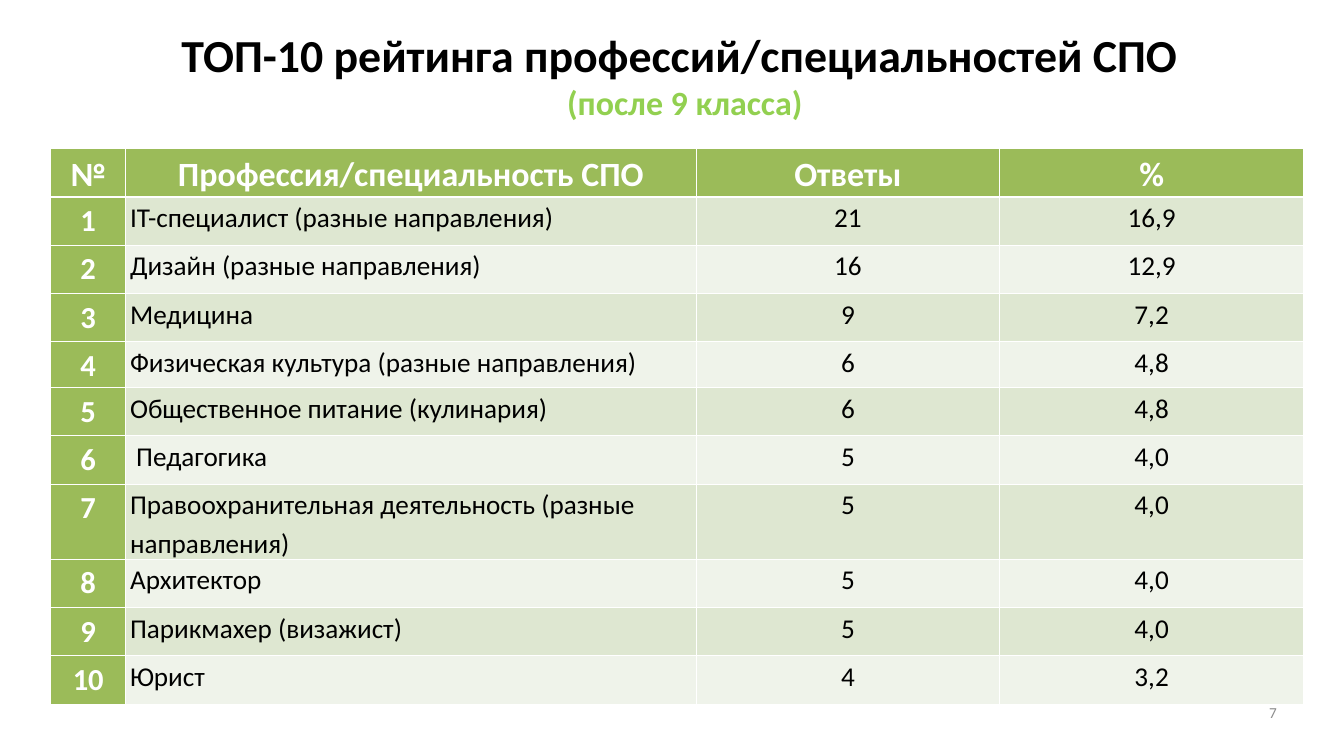
import pptx
import pptx.util
import pptx.dml.color
import pptx.enum.text
import pptx.oxml

W, H = 21.99, 12.37
COLORS = {"white": "FFFFFF", "black": "000000", "lime": "92D050", "green": "9BBB59",
          "band": "DEE7D1", "pale": "EFF3EA", "gray": "8C8C8C"}
ALIGN = pptx.enum.text.PP_ALIGN
HEADER = ("№", "Профессия/специальность СПО", "Ответы", "%")
RATING = [
    ("IT-специалист (разные направления)", "21", "16,9"),
    ("Дизайн (разные направления)", "16", "12,9"),
    ("Медицина", "9", "7,2"),
    ("Физическая культура (разные направления)", "6", "4,8"),
    ("Общественное питание (кулинария)", "6", "4,8"),
    (" Педагогика", "5", "4,0"),
    ("Правоохранительная деятельность (разные направления)", "5", "4,0"),
    ("Архитектор", "5", "4,0"),
    ("Парикмахер (визажист)", "5", "4,0"),
    ("Юрист", "4", "3,2"),
]
COLUMN_SHARES = (5.59, 42.43, 22.6, 22.6)
ROW_SHARE, SHORT_ROW_SHARE, SHORT_ROW = 6.39, 6.06, 4


def across(share):
    return pptx.util.Inches(W * share / 100)


def down(share):
    return pptx.util.Inches(H * share / 100)


def rgb(color):
    return pptx.dml.color.RGBColor.from_string(COLORS[color])


def apply(obj, values):
    for name, value in values.items():
        setattr(obj, name, value)


def add_run(p, text, size, color, bold=False):
    r = p.add_run()
    r.text = text
    apply(r.font, {"name": "Calibri", "size": pptx.util.Pt(size), "bold": bold})
    r.font.color.rgb = rgb(color)


def add_text(s, left, top, width, height, align):
    sp = s.shapes.add_textbox(across(left), down(top), across(width), down(height))
    tf = sp.text_frame
    apply(tf, {"word_wrap": True, "margin_left": 0, "margin_right": 0,
               "margin_top": 0, "margin_bottom": 0})
    p = tf.paragraphs[0]
    p.alignment = align
    return p


def add_border(cell, side, width):
    cell._tc.get_or_add_tcPr().append(pptx.oxml.parse_xml(
        f'<a:{side} xmlns:a="http://schemas.openxmlformats.org/drawingml/2006/main"'
        f' w="{pptx.util.Pt(width)}"><a:solidFill><a:srgbClr val="{COLORS["white"]}"/>'
        f'</a:solidFill></a:{side}>'))


def fill_cell(cell, row, col, text):
    heading = row == 0 or col == 0
    margin = pptx.util.Inches(0.06 if heading else 0.07)
    apply(cell, {"margin_left": margin, "margin_right": margin,
                 "margin_top": 0, "margin_bottom": 0})
    widths = {"lnL": 1, "lnR": 1, "lnT": 3 if row == 1 else 1, "lnB": 3 if row == 0 else 1}
    for side, width in widths.items():
        add_border(cell, side, width)
    cell.fill.solid()
    cell.fill.fore_color.rgb = rgb("green" if heading else "band" if row % 2 else "pale")
    p = cell.text_frame.paragraphs[0]
    left = row > 0 and col == 1
    apply(p, {"alignment": ALIGN.LEFT if left else ALIGN.CENTER, "line_spacing": 1.15})
    size = 40 if row == 0 else 36 if col == 0 else 32
    add_run(p, text, size, "white" if heading else "black", heading)


def add_rating(s):
    rows = [HEADER] + [(str(i), *entry) for i, entry in enumerate(RATING, 1)]
    heights = [SHORT_ROW_SHARE if i == SHORT_ROW else ROW_SHARE for i in range(len(rows))]
    table = s.shapes.add_table(len(rows), len(HEADER), across(3.77), down(19.64),
                               across(sum(COLUMN_SHARES)), down(sum(heights))).table
    table.first_col = True
    for column, share in zip(table.columns, COLUMN_SHARES):
        column.width = across(share)
    for i, (texts, share) in enumerate(zip(rows, heights)):
        table.rows[i].height = down(share)
        for j, text in enumerate(texts):
            fill_cell(table.cell(i, j), i, j, text)


def main():
    prs = pptx.Presentation()
    apply(prs, {"slide_width": across(100), "slide_height": down(100)})
    s = prs.slides.add_slide(prs.slide_layouts[6])
    p = add_text(s, 6.41, 3.48, 89.09, 12.77, ALIGN.CENTER)
    add_run(p, "ТОП-10 рейтинга профессий/специальностей СПО ", 54, "black", True)
    p.add_line_break()
    add_run(p, "(после 9 класса)", 40, "lime", True)
    add_rating(s)
    p = add_text(s, 71.99, 92.97, 23.01, 5.01, ALIGN.RIGHT)
    add_run(p, "7", 18, "gray")
    prs.save("out.pptx")


if __name__ == "__main__":
    main()
